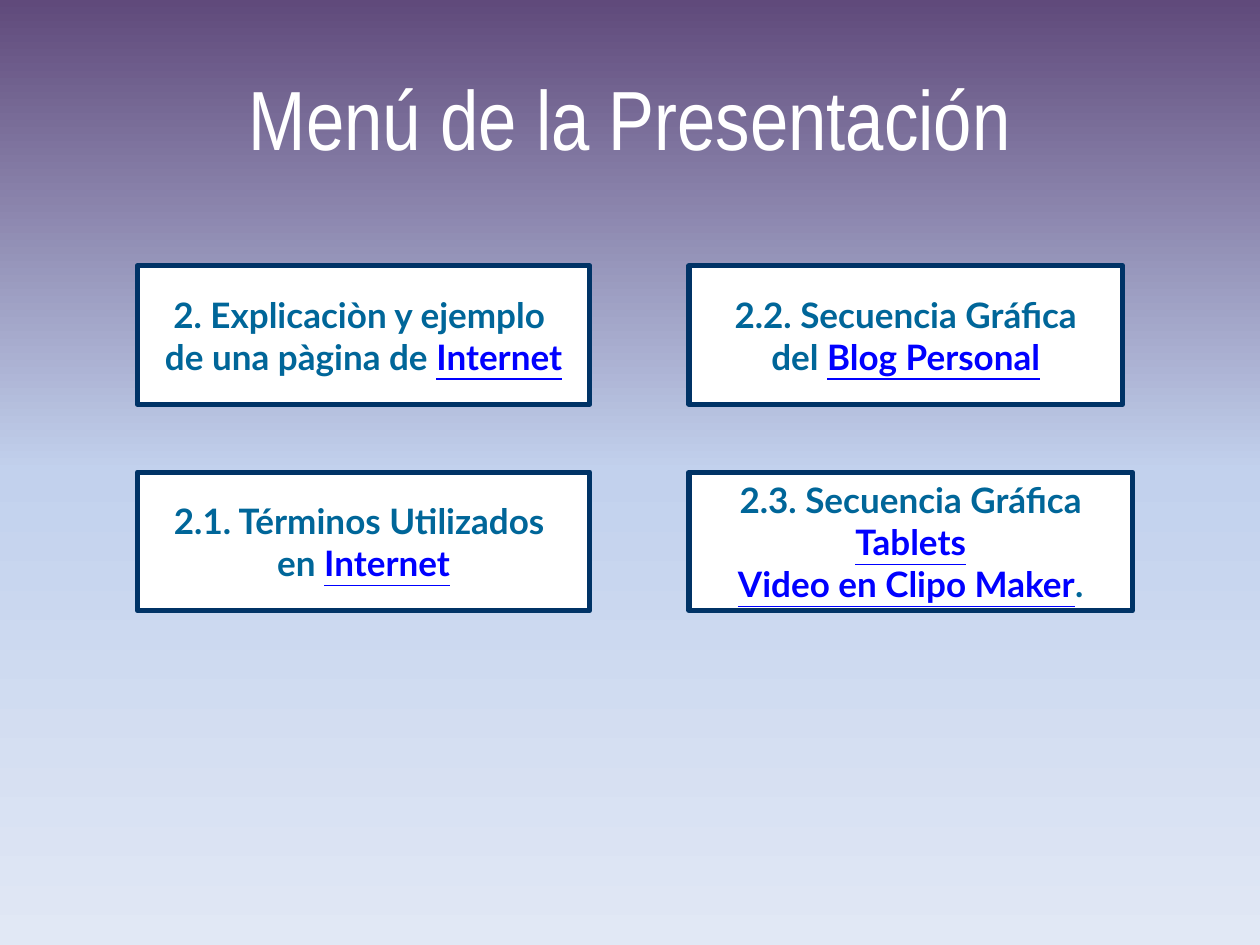
"""Build the menu slide with its four topic boxes."""
import copy

import pptx
import pptx.dml.color
import pptx.enum.shapes
import pptx.enum.text
import pptx.oxml.ns
import pptx.util

Cm = pptx.util.Cm
Pt = pptx.util.Pt
RGBColor = pptx.dml.color.RGBColor

WHITE = RGBColor(0xFF, 0xFF, 0xFF)
NAVY = RGBColor(0x00, 0x33, 0x66)
TEAL = RGBColor(0x00, 0x66, 0x99)
BLUE = RGBColor(0x00, 0x00, 0xFF)
SKY = (
    RGBColor(0x60, 0x4A, 0x7B),
    RGBColor(0xC2, 0xD1, 0xED),
    RGBColor(0xE1, 0xE8, 0xF5),
)

LEFT = (2.77, 13.89)
TOP = (5.36, 9.52)
HIGH = 2.79

# Each line is a plain part, a linked part and a plain tail.
MENU = (
    (0, 0, 9.12, (("2. Explicaciòn y ejemplo ", "", ""),
                  ("de una pàgina de ", "Internet", ""))),
    (1, 0, 8.74, (("2.2. Secuencia Gráfica", "", ""),
                  ("del ", "Blog Personal", ""))),
    (0, 1, 9.12, (("2.1. Términos Utilizados ", "", ""),
                  ("en ", "Internet", ""))),
    (1, 1, 8.94, (("2.3. Secuencia Gráfica", "", ""),
                  ("", "Tablets", ""),
                  ("", "Video en Clipo Maker", "."))),
)


def paint_sky(slide):
    fill = slide.background.fill
    fill.gradient()
    fill.gradient_angle = 270
    stops = slide.element.find(".//" + pptx.oxml.ns.qn("a:gsLst"))
    stops.insert(1, copy.deepcopy(stops[0]))
    for i, (stop, color) in enumerate(zip(fill.gradient_stops, SKY)):
        stop.color.rgb = color
        stop.position = i / 2


def set_font(para, name, size, color, bold=False):
    para.alignment = pptx.enum.text.PP_ALIGN.CENTER
    font = para.font
    font.name, font.size, font.bold = name, Pt(size), bold
    font.color.rgb = color


def add_title(slide, text):
    box = slide.shapes.add_textbox(Cm(1.27), Cm(0.76), Cm(22.86), Cm(3.18))
    frame = box.text_frame
    frame.word_wrap = True
    frame.vertical_anchor = pptx.enum.text.MSO_ANCHOR.MIDDLE
    para = frame.paragraphs[0]
    para.text = text
    set_font(para, "Arial Narrow", 48, WHITE)


def add_line(para, parts):
    set_font(para, "Lato", 20, TEAL, True)
    for i, text in enumerate(parts):
        if text:
            run = para.add_run()
            run.text = text
            if i == 1:
                run.font.underline = True
                run.font.color.rgb = BLUE


def add_box(slide, col, row, wide, lines):
    box = slide.shapes.add_shape(
        pptx.enum.shapes.MSO_SHAPE.RECTANGLE,
        Cm(LEFT[col]), Cm(TOP[row]), Cm(wide), Cm(HIGH))
    box.shadow.inherit = False
    box.fill.solid()
    box.fill.fore_color.rgb = WHITE
    box.line.color.rgb = NAVY
    box.line.width = Pt(3)
    frame = box.text_frame
    frame.word_wrap = False
    frame.vertical_anchor = pptx.enum.text.MSO_ANCHOR.MIDDLE
    for i, parts in enumerate(lines):
        para = frame.add_paragraph() if i else frame.paragraphs[0]
        add_line(para, parts)


def main():
    deck = pptx.Presentation()
    deck.slide_width, deck.slide_height = Cm(25.4), Cm(19.05)
    slide = deck.slides.add_slide(deck.slide_layouts[6])
    paint_sky(slide)
    add_title(slide, "Menú de la Presentación")
    for item in MENU:
        add_box(slide, *item)
    deck.save("out.pptx")


if __name__ == "__main__":
    main()
